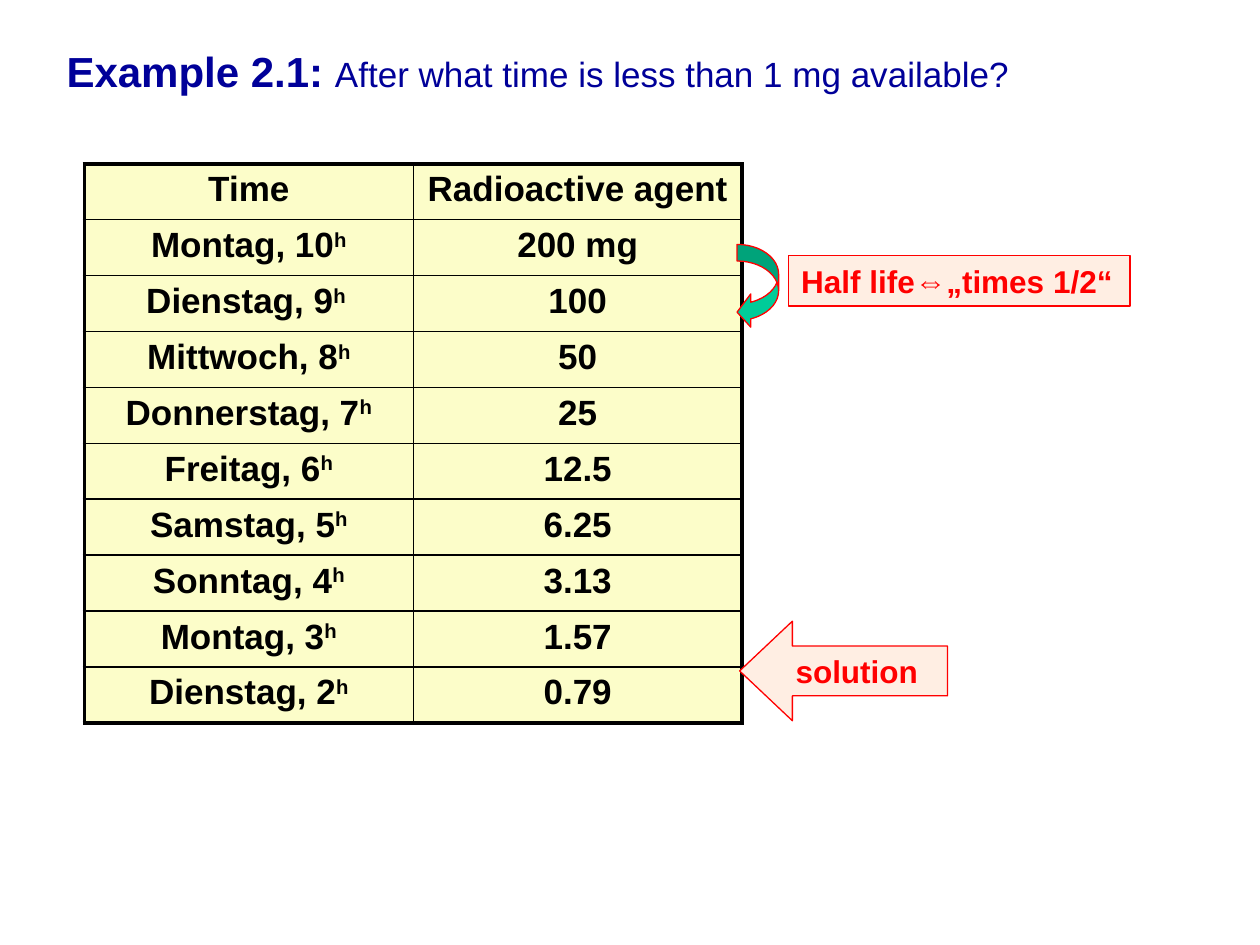
from lxml.etree import SubElement
from pptx import Presentation
from pptx.dml.color import RGBColor
from pptx.enum.shapes import MSO_SHAPE as Preset
from pptx.enum.text import MSO_ANCHOR as Anchor, MSO_AUTO_SIZE as AutoSize, PP_ALIGN as Align
from pptx.oxml.ns import qn
from pptx.util import Inches, Pt

COLORS = {
    "title": "000099",
    "text": "000000",
    "cell": "FCFDC9",
    "note": "FFEEE3",
    "accent": "FF0000",
    "curve": "00CC99",
}
DECAY = [
    ("Montag, 10", "h", "200 mg"),
    ("Dienstag, 9", "h ", "100"),
    ("Mittwoch, 8", "h", "50"),
    ("Donnerstag, 7", "h", "25"),
    ("Freitag, 6", "h", "12.5"),
    ("Samstag, 5", "h", "6.25"),
    ("Sonntag, 4", "h", "3.13"),
    ("Montag, 3", "h", "1.57"),
    ("Dienstag, 2", "h", "0.79"),
]


def color(name):
    return RGBColor.from_string(COLORS[name])


def add_run(paragraph, text, size, color_name, bold=True):
    run = paragraph.add_run()
    run.text = text
    values = {"name": "Arial", "size": Pt(size), "bold": bold}
    for attribute, value in values.items():
        setattr(run.font, attribute, value)
    run.font.color.rgb = color(color_name)
    return run


def add_title(slide, box):
    frame = slide.shapes.add_textbox(*map(Inches, box)).text_frame
    frame.word_wrap = False
    frame.auto_size = AutoSize.SHAPE_TO_FIT_TEXT
    heading = frame.paragraphs[0]
    add_run(heading, "Example 2.1: ", 24, "title")
    add_run(heading, "After what time is less than 1 mg available?", 20, "title", False)


def set_borders(cell, widths):
    properties = cell._tc.get_or_add_tcPr()
    for side, width in widths.items():
        line = SubElement(properties, qn(f"a:ln{side}"), w=str(Pt(width)))
        fill = SubElement(line, qn("a:solidFill"))
        SubElement(fill, qn("a:srgbClr"), val=COLORS["text"])


def fill_cell(cell, text, superscript, widths):
    set_borders(cell, widths)
    cell.fill.solid()
    cell.fill.fore_color.rgb = color("cell")
    entry = cell.text_frame.paragraphs[0]
    entry.alignment = Align.CENTER
    spacing = SubElement(entry._p.get_or_add_pPr(), qn("a:spcBef"))
    SubElement(spacing, qn("a:spcPct"), val="20000")
    add_run(entry, text, 20, "text")
    if superscript:
        raised = add_run(entry, superscript, 20, "text")
        raised.font._element.set("baseline", "30000")


def add_decay_table(slide, box):
    rows = [(("Time", ""), ("Radioactive agent", ""))]
    rows += [((day, hour), (amount, "")) for day, hour, amount in DECAY]
    table = slide.shapes.add_table(len(rows), 2, *map(Inches, box)).table
    table.first_row = table.horz_banding = False
    last = len(rows) - 1
    for r, row in enumerate(rows):
        for c, (text, superscript) in enumerate(row):
            outer = {"L": c == 0, "R": c == 1, "T": r == 0, "B": r == last}
            widths = {side: 2.25 if edge else 1 for side, edge in outer.items()}
            fill_cell(table.cell(r, c), text, superscript, widths)


def add_marker(slide, preset, box, fill, adjustments=()):
    marker = slide.shapes.add_shape(preset, *map(Inches, box))
    marker.shadow.inherit = False
    marker.fill.solid()
    marker.fill.fore_color.rgb = color(fill)
    marker.line.color.rgb = color("accent")
    marker.line.width = Pt(0.75)
    for index, value in enumerate(adjustments):
        marker.adjustments[index] = value
    return marker


def label(marker, text, **layout):
    frame = marker.text_frame
    alignment = layout.pop("alignment")
    for attribute, value in {"word_wrap": False, **layout}.items():
        setattr(frame, attribute, value)
    frame.paragraphs[0].alignment = alignment
    add_run(frame.paragraphs[0], text, 18, "accent")


def main():
    deck = Presentation()
    deck.slide_width, deck.slide_height = Inches(10), Inches(7.5)
    slide = deck.slides.add_slide(deck.slide_layouts[6])

    add_title(slide, (0.43, 0.31, 7.74, 0.51))
    add_decay_table(slide, (0.67, 1.3, 5.22, 4.44))
    add_marker(slide, Preset.CURVED_LEFT_ARROW, (5.85, 1.94, 0.33, 0.67),
               "curve", (0.4, 0.8, 0.33))
    half_life = add_marker(slide, Preset.RECTANGLE, (6.26, 2.03, 2.71, 0.4), "note")
    label(half_life, "Half life⇔„times 1/2“", alignment=Align.LEFT,
          vertical_anchor=Anchor.TOP, auto_size=AutoSize.SHAPE_TO_FIT_TEXT)
    solution = add_marker(slide, Preset.LEFT_ARROW, (5.87, 4.93, 1.65, 0.79),
                          "note", (0.5, 0.53))
    label(solution, "solution", alignment=Align.CENTER, vertical_anchor=Anchor.MIDDLE)

    deck.save("out.pptx")


if __name__ == "__main__":
    main()
